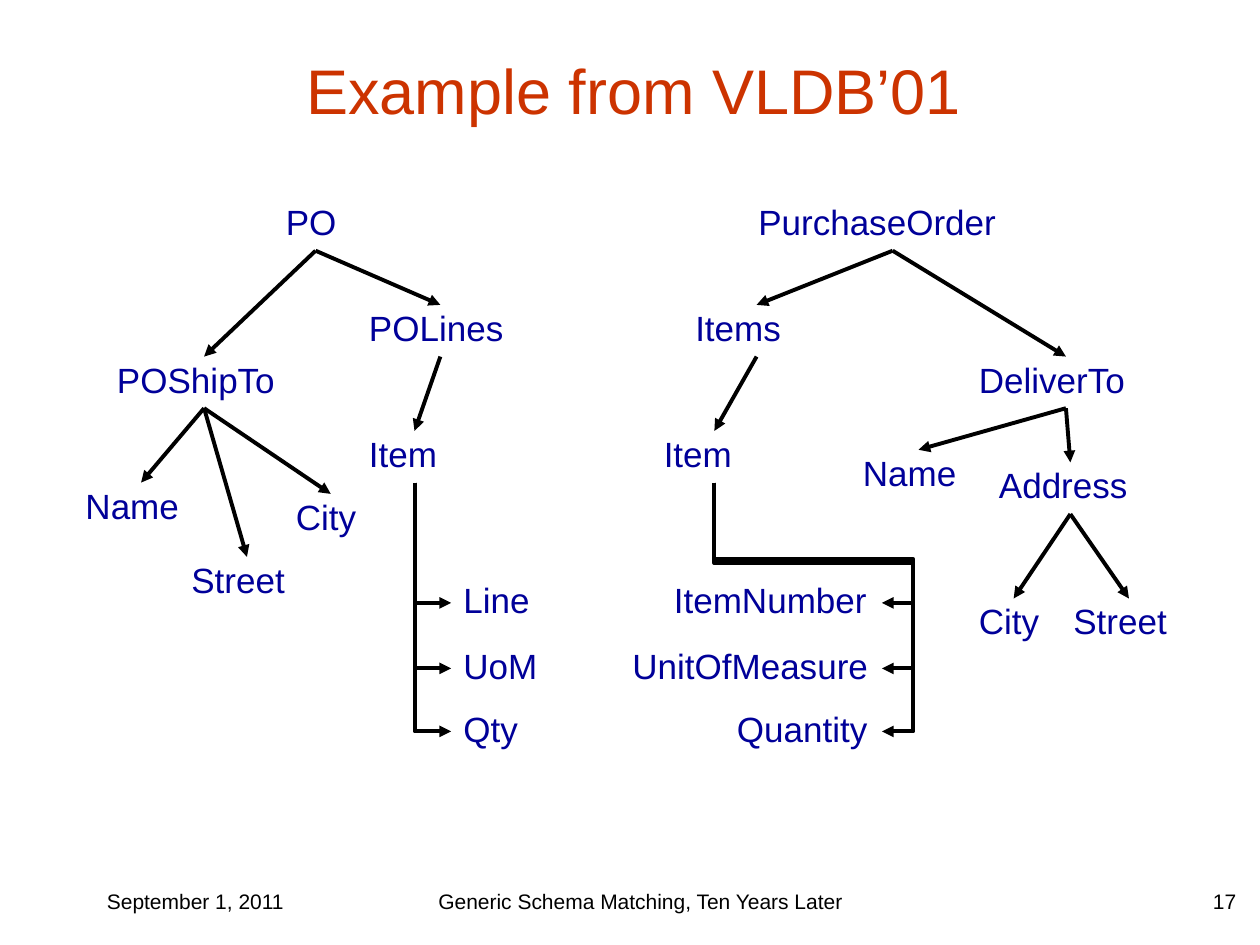
from lxml import etree
from pptx import Presentation, util as u
from pptx.dml.color import RGBColor
from pptx.enum import shapes, text
from pptx.oxml.ns import qn

THEME = dict(font="Arial", title=("CC3300", 36), node=("000099", 20),
             footer=("000000", 12), line=("000000", 2.25))
NODE_H = 0.41
LEFT, CENTER, RIGHT = text.PP_ALIGN.LEFT, text.PP_ALIGN.CENTER, text.PP_ALIGN.RIGHT

TITLE = ("Example from VLDB’01", 0.53, 0.08, 9, 1.25)
FOOTERS = [("September 1, 2011", 0.75, 2.08, LEFT),
           ("Generic Schema Matching, Ten Years Later", 3.17, 3.83, CENTER),
           ("17", 7.83, 2.08, RIGHT)]

# Each schema: nodes as name -> (left, top, width), then parent -> children
PO_NODES = {
    "PO": (2.17, 1.58, 0.67), "POLines": (2.83, 2.42, 1.33),
    "POShipTo": (0.83, 2.83, 1.58), "Item": (2.83, 3.42, 0.92),
    "Name": (0.58, 3.83, 1.08), "City": (2.25, 3.92, 0.75),
    "Street": (1.42, 4.42, 1.08), "Line": (3.58, 4.58, 0.83),
    "UoM": (3.58, 5.1, 0.83), "Qty": (3.58, 5.6, 0.75),
}
PO_TREE = {"PO": ["POShipTo", "POLines"], "POLines": ["Item"],
           "POShipTo": ["Name", "Street", "City"]}
ORDER_NODES = {
    "PurchaseOrder": (5.92, 1.58, 2.33), "Items": (5.42, 2.42, 1.17),
    "DeliverTo": (7.67, 2.83, 1.58), "Item": (5.17, 3.42, 1),
    "Name": (6.75, 3.57, 1.08), "Address": (7.83, 3.67, 1.33),
    "City": (7.67, 4.75, 0.75), "Street": (8.42, 4.75, 1.08),
    "ItemNumber": (5.25, 4.58, 1.75), "UnitOfMeasure": (4.92, 5.1, 2.08),
    "Quantity": (5.75, 5.6, 1.25),
}
ORDER_TREE = {"PurchaseOrder": ["Items", "DeliverTo"], "Items": ["Item"],
              "DeliverTo": ["Name", "Address"], "Address": ["City", "Street"]}

# Item fields: name -> height of the shoulder when the arrow comes from the right
PO_FIELDS = {"Line": None, "UoM": None, "Qty": None}
ORDER_FIELDS = {"ItemNumber": 4.44, "UnitOfMeasure": 4.46, "Quantity": 4.47}
RAIL_X = 7.25


def add_text(s, words, x, y, w, h, style, align=LEFT):
    tf = s.shapes.add_textbox(*map(u.Inches, (x, y, w, h))).text_frame
    tf.word_wrap = True
    tf.text = words
    p = tf.paragraphs[0]
    p.alignment = align
    color, size = THEME[style]
    font = p.runs[0].font
    font.name, font.size = THEME["font"], u.Pt(size)
    font.color.rgb = RGBColor.from_string(color)
    return tf


def add_node(s, name, x, y, w):
    tf = add_text(s, name, x, y, w, NODE_H, "node")
    tf.auto_size = text.MSO_AUTO_SIZE.SHAPE_TO_FIT_TEXT
    tf.paragraphs[0].line_spacing = 0.9
    tf.paragraphs[0].space_before = u.Pt(4)


def add_arrow(s, start, end, kind=shapes.MSO_CONNECTOR.STRAIGHT):
    c = s.shapes.add_connector(kind, *map(u.Inches, (*start, *end)))
    color, width = THEME["line"]
    c.line.color.rgb = RGBColor.from_string(color)
    c.line.width = u.Pt(width)
    etree.SubElement(c.line._get_or_add_ln(), qn("a:tailEnd"), type="triangle")
    etree.SubElement(c._element.spPr, qn("a:effectLst"))
    return c


def add_bent_arrow(s, start, end, shoulder=None):
    """Leave downwards and enter sideways; a shoulder detours by way of RAIL_X."""
    (x1, y1), (x2, y2) = start, end
    run, drop = x2 - x1, y2 - y1
    cx, cy = (x1 + x2) / 2, (y1 + y2) / 2
    # The preset leaves sideways, so its box is laid flat, turned and flipped
    c = add_arrow(s, (cx - drop / 2, cy - run / 2), (cx + drop / 2, cy + run / 2),
                  shapes.MSO_CONNECTOR.ELBOW)
    spPr = c._element.spPr
    xfrm, geom = spPr.find(qn("a:xfrm")), spPr.find(qn("a:prstGeom"))
    xfrm.set("rot", str(270 * 60000))
    xfrm.set("flipH", "1")
    geom.set("prst", "bentConnector4" if shoulder else "bentConnector2")
    if shoulder:
        guides = geom.find(qn("a:avLst"))
        ratios = ((shoulder - y1) / drop, (RAIL_X - x1) / run)
        for i, ratio in enumerate(ratios, 1):
            etree.SubElement(guides, qn("a:gd"), name=f"adj{i}",
                             fmla=f"val {round(ratio * 100000)}")


def add_schema(s, nodes, tree, fields):
    def top(name):
        x, y, w = nodes[name]
        return x + w / 2, y

    def bottom(name):
        x, y = top(name)
        return x, y + NODE_H

    for name, place in nodes.items():
        add_node(s, name, *place)
    for parent, children in tree.items():
        for child in children:
            add_arrow(s, bottom(parent), top(child))
    for name, shoulder in fields.items():
        x, y, w = nodes[name]
        end = (x + w if shoulder else x, y + NODE_H / 2)
        add_bent_arrow(s, bottom("Item"), end, shoulder)


def main():
    prs = Presentation()
    prs.slide_width, prs.slide_height = u.Inches(10), u.Inches(7.5)
    s = prs.slides.add_slide(prs.slide_layouts[6])
    for words, x, w, align in FOOTERS:
        add_text(s, words, x, 7, w, 0.5, "footer", align)
    title = add_text(s, *TITLE, "title", CENTER)
    title.vertical_anchor = text.MSO_ANCHOR.MIDDLE
    add_schema(s, PO_NODES, PO_TREE, PO_FIELDS)
    add_schema(s, ORDER_NODES, ORDER_TREE, ORDER_FIELDS)
    prs.save("out.pptx")


if __name__ == "__main__":
    main()
